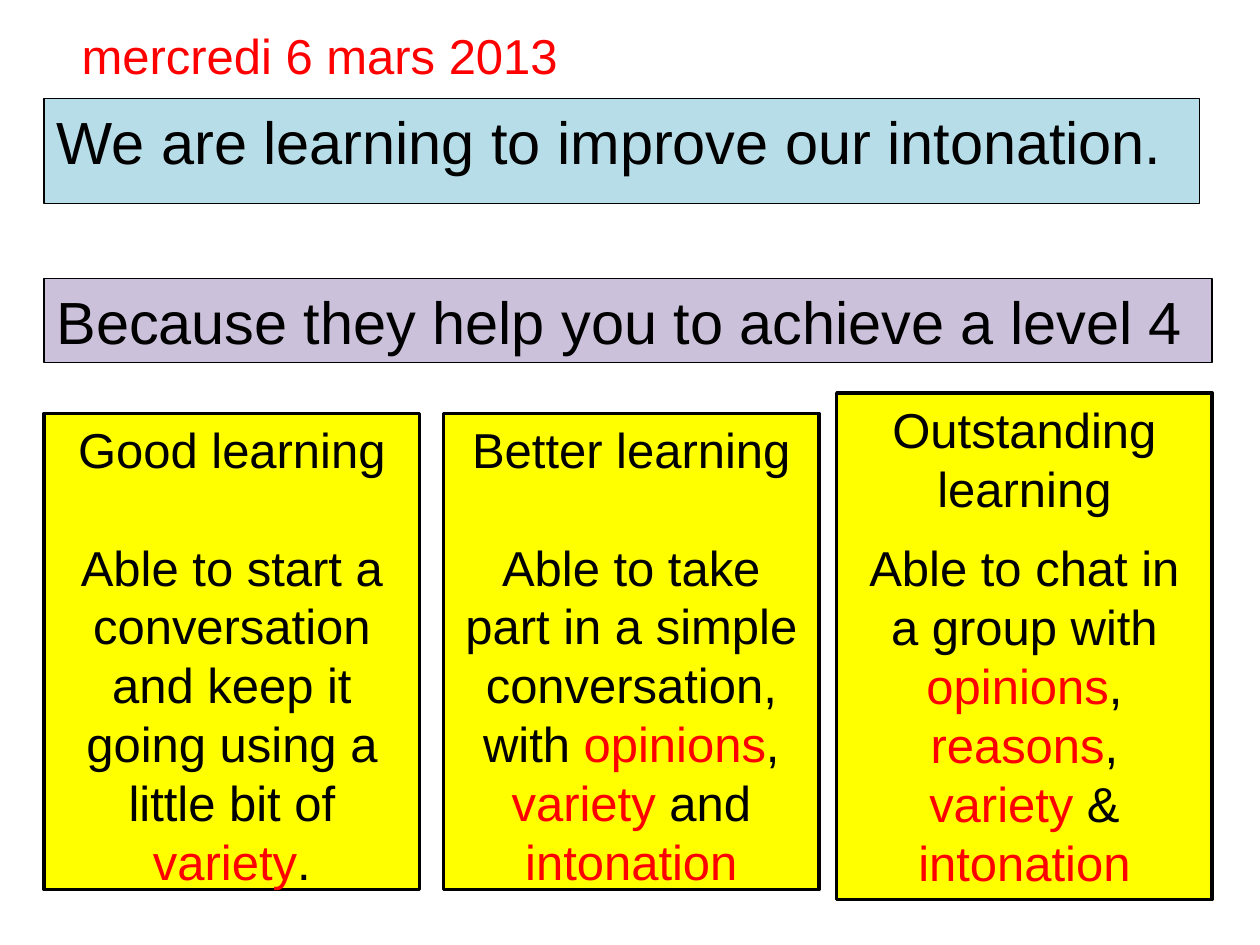
import pptx
import pptx.dml.color
import pptx.enum.shapes
import pptx.enum.text
import pptx.util
from dataclasses import dataclass
from pptx.util import Inches

ALIGN = pptx.enum.text.PP_ALIGN
ANCHOR = pptx.enum.text.MSO_ANCHOR
AUTO_SIZE = pptx.enum.text.MSO_AUTO_SIZE
RECTANGLE = pptx.enum.shapes.MSO_SHAPE.RECTANGLE


@dataclass(frozen=True)
class Theme:
    font: str = "Arial"
    ink: str = "000000"
    accent: str = "FF0000"
    goal: str = "B7DEE8"
    reason: str = "CCC1DA"
    card: str = "FFFF00"
    banner_size: int = 34
    body_size: int = 28
    thin_line: float = 0.75
    thick_line: float = 2


def rgb(color):
    return pptx.dml.color.RGBColor.from_string(color)


class LessonSlide:
    def __init__(self, presentation, theme):
        self.theme = theme
        self.slide = presentation.slides.add_slide(presentation.slide_layouts[5])

    def place(self, shape, left, top, width, height):
        shape.left, shape.top = Inches(left), Inches(top)
        shape.width, shape.height = Inches(width), Inches(height)

    def paint(self, shape, fill, line_width):
        shape.fill.solid()
        shape.fill.fore_color.rgb = rgb(fill)
        shape.line.color.rgb = rgb(self.theme.ink)
        shape.line.width = pptx.util.Pt(line_width)

    def rectangle(self, box):
        shape = self.slide.shapes.add_shape(RECTANGLE, *map(Inches, box))
        shape.shadow.inherit = False
        return shape

    def set_text(self, shape, paragraphs, size, color, align=ALIGN.LEFT,
                 anchor=ANCHOR.TOP, gap=0):
        """Words between asterisks take the accent colour; gap follows the first paragraph."""
        frame = shape.text_frame
        frame.word_wrap = True
        frame.vertical_anchor = anchor
        for index, text in enumerate(paragraphs):
            paragraph = frame.paragraphs[0] if index == 0 else frame.add_paragraph()
            paragraph.alignment = align
            paragraph.space_before = pptx.util.Pt(gap if index == 1 else 0)
            paragraph.font.name = self.theme.font
            paragraph.font.size = pptx.util.Pt(size)
            paragraph.font.color.rgb = rgb(color)
            for part, words in enumerate(text.split("*")):
                if words:
                    run = paragraph.add_run()
                    run.text = words
                    if part % 2:
                        run.font.color.rgb = rgb(self.theme.accent)

    def banner(self, shape, text, fill):
        self.paint(shape, fill, self.theme.thin_line)
        self.set_text(shape, [text], self.theme.banner_size, self.theme.ink)
        shape.text_frame.auto_size = AUTO_SIZE.SHAPE_TO_FIT_TEXT

    def title_banner(self, text, fill, box):
        title = self.slide.shapes.title
        self.place(title, *box)
        self.banner(title, text, fill)

    def plain_banner(self, text, fill, box):
        self.banner(self.rectangle(box), text, fill)

    def card(self, paragraphs, box, gap):
        shape = self.rectangle(box)
        self.paint(shape, self.theme.card, self.theme.thick_line)
        self.set_text(shape, paragraphs, self.theme.body_size, self.theme.ink,
                      align=ALIGN.CENTER, gap=gap)

    def date(self, text, box):
        shape = self.slide.shapes.add_textbox(*map(Inches, box))
        self.set_text(shape, [text], self.theme.body_size, self.theme.accent,
                      anchor=ANCHOR.MIDDLE)


def main():
    presentation = pptx.Presentation()
    presentation.slide_width = Inches(10)
    presentation.slide_height = Inches(7.5)
    theme = Theme()
    lesson = LessonSlide(presentation, theme)

    # Learning goal and the reason for it
    left = 0.35
    lesson.title_banner("We are learning to improve our intonation.", theme.goal,
                        (left, 0.78, 9.17, 0.67))
    lesson.plain_banner("Because they help you to achieve a level 4", theme.reason,
                        (left, 2.21, 9.27, 0.67))

    # Three levels of success: left, top, height, gap below heading, text
    cards = [
        (left, 3.28, 3.78, 33.6, [
            "Good learning",
            "Able to start a conversation",
            "and keep it going using a little bit of *variety*."]),
        (3.52, 3.28, 3.78, 33.6, [
            "Better learning",
            "Able to take part in a simple conversation, with *opinions*, "
            "*variety* and *intonation*"]),
        (6.64, 3.12, 4.02, 12, [
            "Outstanding learning",
            "Able to chat in a group with *opinions*, *reasons*,",
            "*variety* & *intonation*"]),
    ]
    for card_left, top, height, gap, paragraphs in cards:
        lesson.card(paragraphs, (card_left, top, 2.98, height), gap)

    # Date
    lesson.date("mercredi 6 mars 2013", (0.55, 0.16, 4.69, 0.55))

    presentation.save("out.pptx")


if __name__ == "__main__":
    main()
